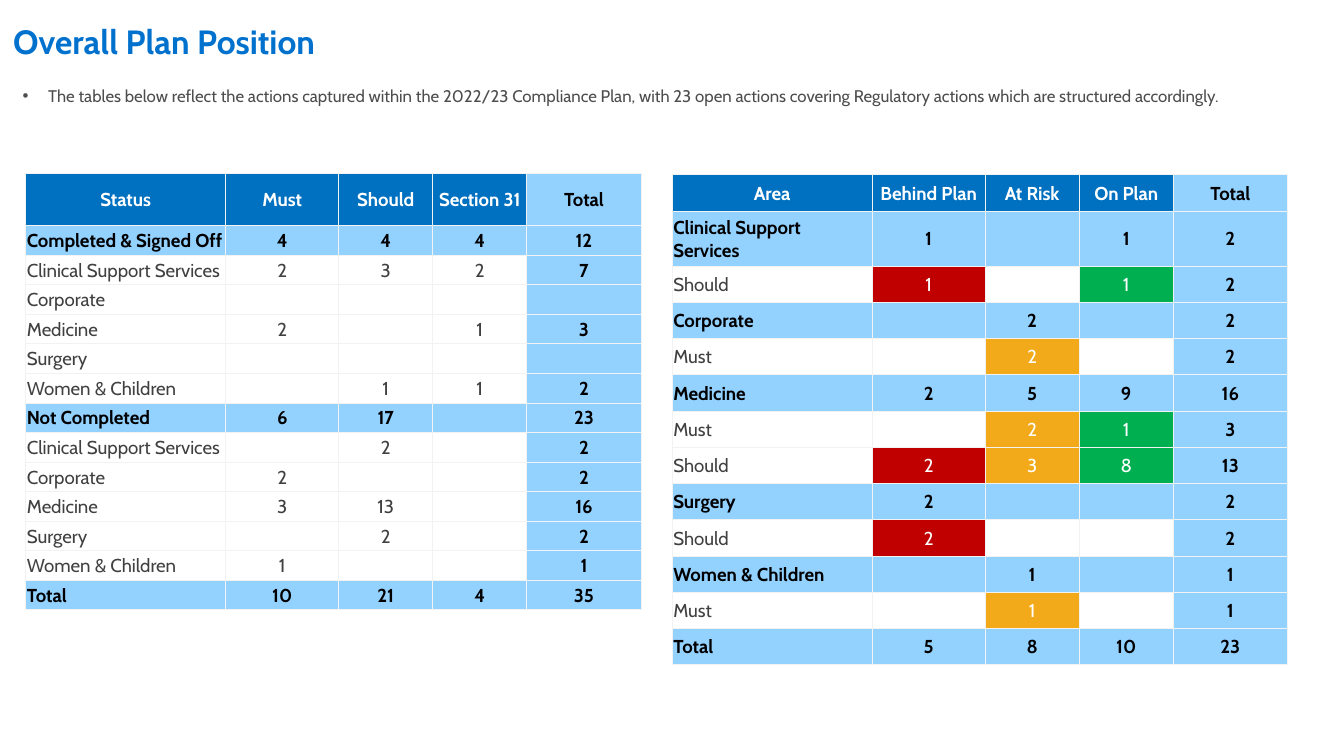
from lxml.etree import SubElement
from pptx import Presentation
from pptx.dml.color import RGBColor
from pptx.enum.text import MSO_ANCHOR as ANCHOR, PP_ALIGN as ALIGN
from pptx.oxml.ns import qn
from pptx.util import Inches, Pt

COLORS = {
    "title": "0072CE", "body": "4D4D4D", "label": "404040",
    "header": "0070C0", "band": "93D1FF", "border": "F2F2F2",
    "white": "FFFFFF", "black": "000000",
    "red": "C00000", "amber": "F2AA1A", "green": "00B050",
}
COL_WIDTHS = [1.49, 0.84, 0.7, 0.7, 0.85]
RATINGS = {1: "red", 2: "amber", 3: "green"}

status_rows = [
    "Status|Must|Should|Section 31|Total",
    "Completed & Signed Off|4|4|4|12",
    "Clinical Support Services|2|3|2|7",
    "Corporate||||",
    "Medicine|2||1|3",
    "Surgery||||",
    "Women & Children||1|1|2",
    "Not Completed|6|17||23",
    "Clinical Support Services||2||2",
    "Corporate|2|||2",
    "Medicine|3|13||16",
    "Surgery||2||2",
    "Women & Children|1|||1",
    "Total|10|21|4|35",
]
area_rows = [
    "Area|Behind Plan|At Risk|On Plan|Total",
    "Clinical Support Services|1||1|2",
    "Should|1||1|2",
    "Corporate||2||2",
    "Must||2||2",
    "Medicine|2|5|9|16",
    "Must||2|1|3",
    "Should|2|3|8|13",
    "Surgery|2|||2",
    "Should|2|||2",
    "Women & Children||1||1",
    "Must||1||1",
    "Total|5|8|10|23",
]


def style_text(p, size, color, bold=False):
    for r in p.runs:
        r.font.name = "Cabin"
        r.font.size = Pt(size)
        r.font.bold = bold
        r.font.color.rgb = RGBColor.from_string(COLORS[color])


def add_borders(cell):
    tcPr = cell._tc.get_or_add_tcPr()
    for side in ("a:lnL", "a:lnR", "a:lnT", "a:lnB"):
        ln = SubElement(tcPr, qn(side), w=str(Pt(0.5)))
        fill = SubElement(ln, qn("a:solidFill"))
        SubElement(fill, qn("a:srgbClr"), val=COLORS["border"])


prs = Presentation()
prs.slide_width = Inches(10)
prs.slide_height = Inches(10) * 9 // 16
s = prs.slides.add_slide(prs.slide_layouts[6])

intro = s.shapes.add_textbox(Inches(0.07), Inches(0.59), Inches(9.62), Inches(0.4))
tf = intro.text_frame
tf.word_wrap = True
p = tf.paragraphs[0]
p.text = ("The tables below reflect the actions captured within the 2022/23 Compliance Plan, "
          "with 23 open actions covering Regulatory actions which are structured accordingly. ")
p.alignment = ALIGN.JUSTIFY
pPr = p._p.get_or_add_pPr()
pPr.set("marL", str(Inches(0.19)))
pPr.set("indent", str(Inches(-0.19)))
SubElement(pPr, qn("a:buFont"), typeface="Arial")
SubElement(pPr, qn("a:buChar"), char="•")
style_text(p, 9, "body")

title = s.shapes.add_textbox(Inches(0), Inches(0.11), Inches(9.75), Inches(0.46))
tf = title.text_frame
tf.word_wrap = True
tf.vertical_anchor = ANCHOR.TOP
tf.text = "Overall Plan Position"
style_text(tf.paragraphs[0], 18, "title", True)

tables = [
    (0.19, 1.29, status_rows, {1, 7, 13}, [0.39] + [0.22] * 13, {}),
    (5, 1.3, area_rows, {1, 3, 5, 8, 10, 12}, [0.27, 0.41] + [0.27] * 11, RATINGS),
]
for left, top, rows, bands, heights, ratings in tables:
    frame = s.shapes.add_table(len(rows), len(COL_WIDTHS), Inches(left), Inches(top),
                               Inches(sum(COL_WIDTHS)), Inches(sum(heights)))
    table = frame.table
    table.first_row = table.horz_banding = False
    for column, width in zip(table.columns, COL_WIDTHS):
        column.width = Inches(width)
    for i, (row, height) in enumerate(zip(rows, heights)):
        table.rows[i].height = Inches(height)
        for j, value in enumerate(row.split("|")):
            if j == 4 or i in bands:
                fill, color, bold = "band", "black", True
            elif i == 0:
                fill, color, bold = "header", "white", True
            elif value and j in ratings:
                fill, color, bold = ratings[j], "white", False
            else:
                fill, color, bold = "white", "label", False
            cell = table.cell(i, j)
            cell.margin_left = cell.margin_right = cell.margin_top = Inches(0.01)
            cell.margin_bottom = 0
            cell.vertical_anchor = ANCHOR.MIDDLE
            add_borders(cell)
            cell.fill.solid()
            cell.fill.fore_color.rgb = RGBColor.from_string(COLORS[fill])
            p = cell.text_frame.paragraphs[0]
            p.text = value
            p.alignment = ALIGN.LEFT if j == 0 and i > 0 else ALIGN.CENTER
            style_text(p, 10, color, bold)
            if not value:
                SubElement(p._p, qn("a:endParaRPr"), sz="1000")

prs.save("out.pptx")
